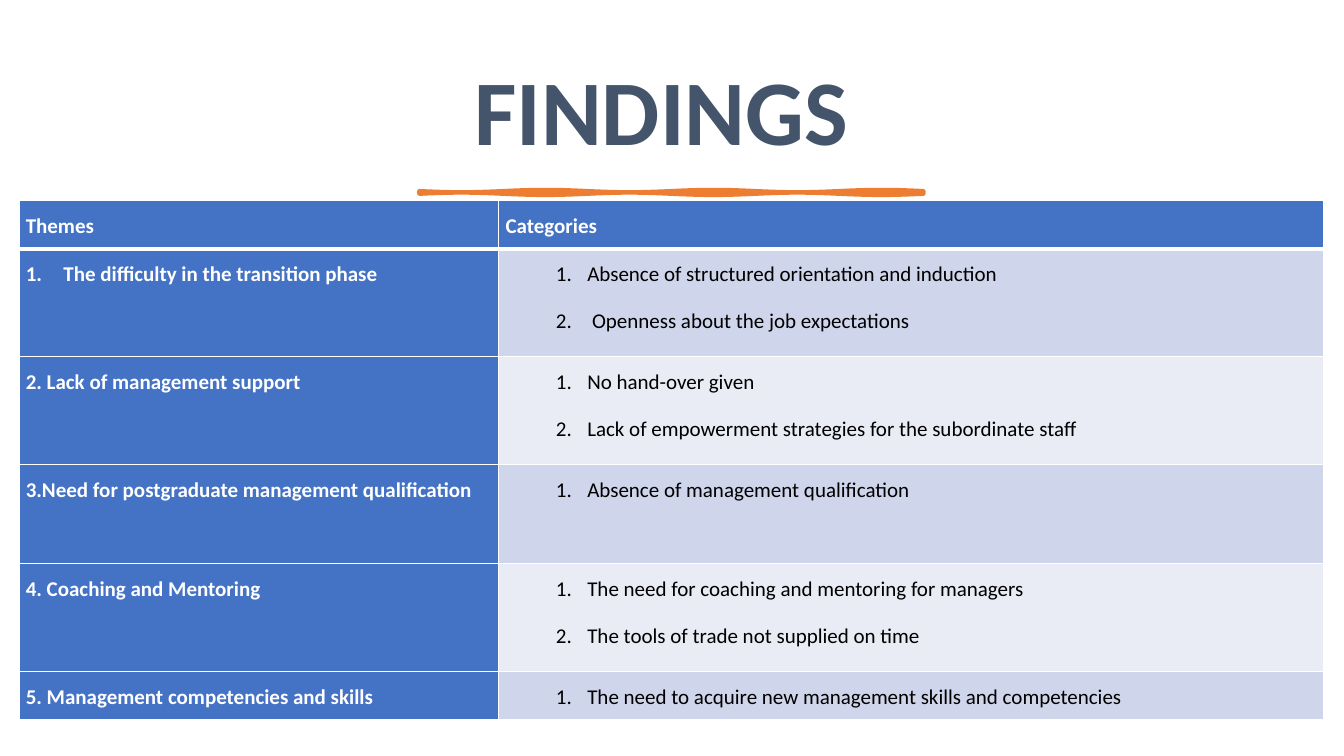
from math import pi, sin

from lxml.etree import SubElement
from pptx import Presentation
from pptx.dml.color import RGBColor
from pptx.enum.text import MSO_ANCHOR, PP_ALIGN
from pptx.oxml import parse_xml
from pptx.oxml.ns import nsdecls, qn
from pptx.util import Cm, Pt

FONT = "Calibri"
WHITE = RGBColor(0xFF, 0xFF, 0xFF)
BLACK = RGBColor(0x00, 0x00, 0x00)
SLATE = RGBColor(0x44, 0x54, 0x6A)
ORANGE = RGBColor(0xED, 0x7D, 0x31)
BLUE = RGBColor(0x44, 0x72, 0xC4)
BANDS = [RGBColor(0xCF, 0xD5, 0xEA), RGBColor(0xE9, 0xEB, 0xF5)]

HEADERS = ["Themes", "Categories"]
FINDINGS = [
    ("The difficulty in the transition phase",
     ["Absence of structured orientation and induction", " Openness about the job expectations"]),
    ("2. Lack of management support",
     ["No hand-over given", "Lack of empowerment strategies for the subordinate staff"]),
    ("3.Need for postgraduate management qualification",
     ["Absence of management qualification"]),
    ("4. Coaching and Mentoring",
     ["The need for coaching and mentoring for managers", "The tools of trade not supplied on time"]),
    ("5. Management competencies and skills",
     ["The need to acquire new management skills and competencies"]),
]
COLUMN_WIDTHS = [12.09, 20.78]
ROW_HEIGHTS = [1.22, 2.72, 2.72, 2.49, 2.72, 1.22]

TITLE_FONT = {"name": FONT, "size": Pt(66), "bold": True}
THEME_FONT = {"name": FONT, "size": Pt(15), "bold": True}
CATEGORY_FONT = {"name": FONT, "size": Pt(15), "bold": False}
CELL_FORMAT = {"margin_left": Cm(0.17), "margin_right": Cm(0.17), "margin_top": 0, "margin_bottom": 0}
PARAGRAPH_FORMAT = {"line_spacing": 1.5, "space_before": Pt(6.1), "space_after": Pt(0)}


def apply_format(target, values):
    for name, value in values.items():
        setattr(target, name, value)


def write_run(paragraph, text, font_format, color):
    run = paragraph.add_run()
    run.text = text
    apply_format(run.font, font_format)
    run.font.color.rgb = color


def number_paragraph(paragraph, margin, hanging):
    properties = paragraph._p.get_or_add_pPr()
    properties.set("marL", str(Cm(margin)))
    properties.set("indent", str(-Cm(hanging)))
    SubElement(properties, qn("a:buFont"), typeface="+mj-lt")
    SubElement(properties, qn("a:buAutoNum"), type="arabicPeriod")


def set_borders(cell, top, bottom):
    properties = cell._tc.get_or_add_tcPr()
    widths = {"lnL": 1, "lnR": 1, "lnT": top, "lnB": bottom}
    for index, (side, width) in enumerate(widths.items()):
        properties.insert(index, parse_xml(
            f'<a:{side} {nsdecls("a")} w="{Pt(width)}"><a:solidFill>'
            f'<a:srgbClr val="{WHITE}"/></a:solidFill></a:{side}>'))


def fill_cell(cell, texts, fill, font_format, color, numbering=None):
    apply_format(cell, CELL_FORMAT)
    cell.fill.solid()
    cell.fill.fore_color.rgb = fill
    frame = cell.text_frame
    for index, text in enumerate(texts):
        paragraph = frame.add_paragraph() if index else frame.paragraphs[0]
        apply_format(paragraph, PARAGRAPH_FORMAT)
        if numbering:
            number_paragraph(paragraph, *numbering)
        write_run(paragraph, text, font_format, color)
    paragraph.space_after = Pt(8)


def add_title(slide, left, top, width, height):
    box = slide.shapes.add_textbox(Cm(left), Cm(top), Cm(width), Cm(height))
    apply_format(box.text_frame, {"word_wrap": True, "vertical_anchor": MSO_ANCHOR.MIDDLE})
    paragraph = box.text_frame.paragraphs[0]
    apply_format(paragraph, {"alignment": PP_ALIGN.CENTER, "line_spacing": 0.9})
    write_run(paragraph, "FINDINGS ", TITLE_FONT, SLATE)


def add_brush_line(slide, left, top, width, height):
    steps = 60
    waves = [(left + width * i / steps, 0.03 * sin(6 * pi * i / steps)) for i in range(steps + 1)]
    upper = [(Cm(x), Cm(top + wave)) for x, wave in waves]
    lower = [(Cm(x), Cm(top + height - wave)) for x, wave in reversed(waves)]
    builder = slide.shapes.build_freeform(*upper[0])
    builder.add_line_segments(upper[1:] + lower, close=True)
    brush = builder.convert_to_shape()
    brush.shadow.inherit = False
    brush.fill.solid()
    brush.fill.fore_color.rgb = ORANGE
    brush.line.color.rgb = ORANGE
    brush.line.width = Pt(3.25)


def add_findings_table(slide, left, top):
    table = slide.shapes.add_table(
        len(ROW_HEIGHTS), len(COLUMN_WIDTHS), Cm(left), Cm(top),
        Cm(sum(COLUMN_WIDTHS)), Cm(sum(ROW_HEIGHTS))).table
    for column, width in zip(table.columns, COLUMN_WIDTHS):
        column.width = Cm(width)
    for row, height in zip(table.rows, ROW_HEIGHTS):
        row.height = Cm(height)
    for column, header in enumerate(HEADERS):
        fill_cell(table.cell(0, column), [header], BLUE, THEME_FONT, WHITE)
    for row, (theme, categories) in enumerate(FINDINGS, 1):
        theme_numbering = (0.95, 0.95) if row == 1 else None
        fill_cell(table.cell(row, 0), [theme], BLUE, THEME_FONT, WHITE, theme_numbering)
        fill_cell(table.cell(row, 1), categories, BANDS[(row - 1) % 2], CATEGORY_FONT, BLACK, (2.06, 0.79))
    for row in range(len(ROW_HEIGHTS)):
        for column in range(len(COLUMN_WIDTHS)):
            set_borders(table.cell(row, column), 3 if row == 1 else 1, 3 if row == 0 else 1)


def main():
    presentation = Presentation()
    presentation.slide_width, presentation.slide_height = Cm(33.87), Cm(19.05)
    slide = presentation.slides.add_slide(presentation.slide_layouts[6])
    add_title(slide, 1.78, 1.17, 30.3, 3.48)
    add_brush_line(slide, 10.57, 4.82, 12.7, 0.06)
    add_findings_table(slide, 0.48, 5.05)
    presentation.save("out.pptx")


if __name__ == "__main__":
    main()
